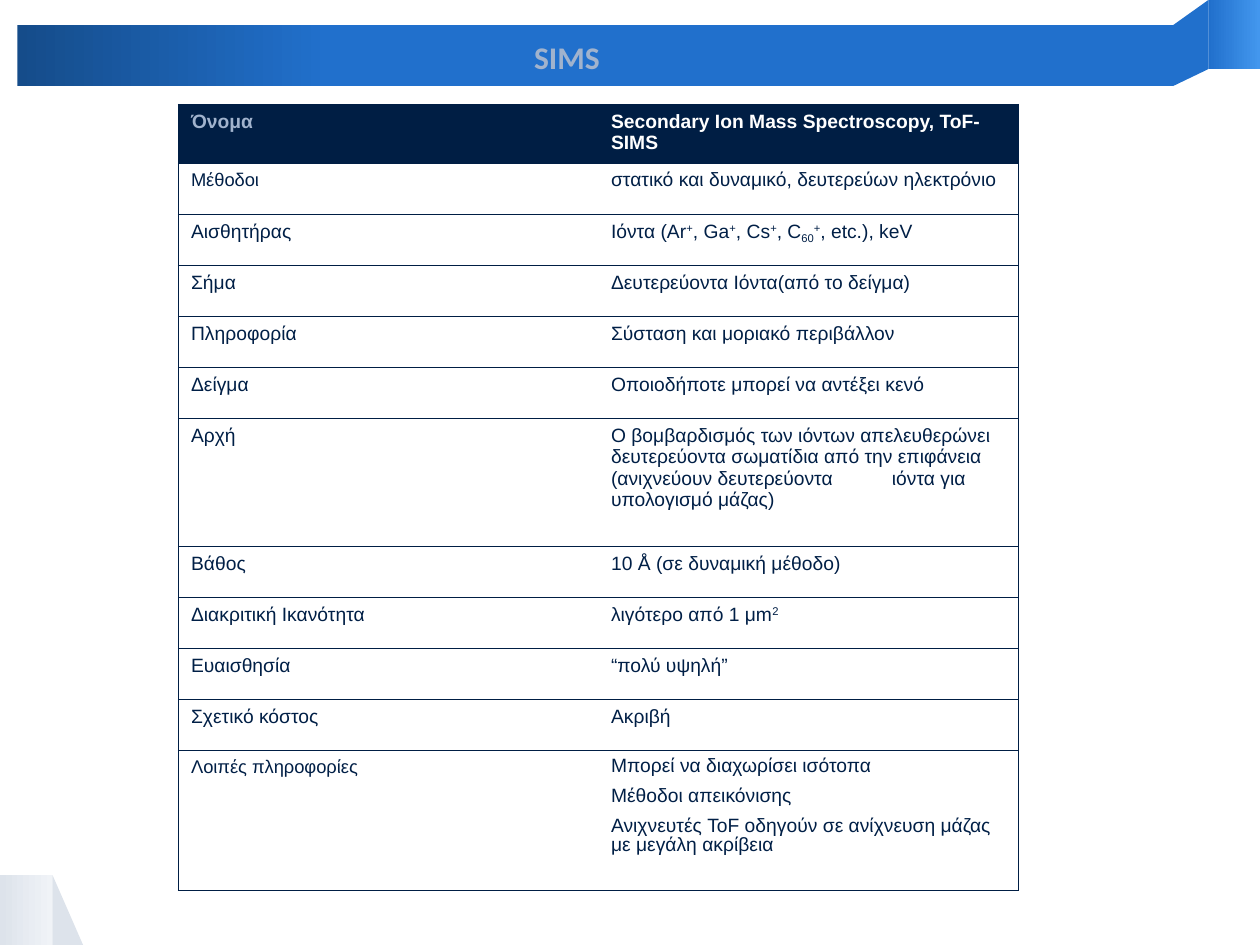
import dataclasses
import typing

import pptx
import pptx.dml.color
import pptx.enum.shapes
import pptx.enum.text
import pptx.util
import lxml.etree
import pptx.oxml.ns

Pt = pptx.util.Pt
SHAPE = pptx.enum.shapes.MSO_SHAPE
qn = pptx.oxml.ns.qn

COLORS = {
    "navy": "001E44",
    "body": "001F46",
    "muted": "A1B3CD",
    "white": "FFFFFF",
    "blue": "2170CC",
    "deep": "154C8A",
    "sky": "4397EE",
    "grey": "DDE3EB",
    "pale": "F0F3F7",
}
SUPER, SUB = 30000, -25000


class Piece(typing.NamedTuple):
    text: str
    baseline: int = 0


@dataclasses.dataclass
class Property:
    label: str
    paragraphs: list[list[Piece]]
    height: float = 29.2
    label_size: float = 11
    label_color: str = "body"
    value_color: str = "body"
    fill: str = "white"
    bold: bool = False
    spacing: float = 1
    before: float = 0
    tab: float = 0


@dataclasses.dataclass
class Panel:
    preset: SHAPE
    left: float
    top: float
    width: float
    height: float
    start: str
    end: str
    end_position: float = 1


PANELS = [
    Panel(SHAPE.RIGHT_TRIANGLE, 30, 500, 17.5, 40, "grey", "grey"),
    Panel(SHAPE.RECTANGLE, 0, 500, 30, 40, "grey", "pale"),
    Panel(SHAPE.RECTANGLE, 690.5, 0, 29.5, 39.5, "blue", "sky"),
    Panel(SHAPE.RECTANGLE, 10, 14.4, 660.3, 34.8, "deep", "blue", 0.27),
]
FOLD = [(690.5, 0), (670.3, 14.4), (670.3, 49.2), (690.5, 39.5)]

PROPERTIES = [
    Property("Όνομα", [[Piece("Secondary Ion Mass Spectroscopy, ToF-SIMS")]], 33.7,
             label_color="muted", value_color="white", fill="navy", bold=True),
    Property("Μέθοδοι", [[Piece("στατικό και δυναμικό, δευτερεύων ηλεκτρόνιο")]], label_size=10.5),
    Property("Αισθητήρας", [[
        Piece("Ιόντα (Ar"), Piece("+", SUPER), Piece(", Ga"), Piece("+", SUPER),
        Piece(", Cs"), Piece("+", SUPER), Piece(", C"), Piece("60", SUB),
        Piece("+", SUPER), Piece(", etc.), keV"),
    ]]),
    Property("Σήμα", [[Piece("Δευτερεύοντα Ιόντα(από το δείγμα)")]]),
    Property("Πληροφορία", [[Piece("Σύσταση και μοριακό περιβάλλον")]]),
    Property("Δείγμα", [[Piece("Οποιοδήποτε μπορεί να αντέξει κενό")]]),
    Property("Αρχή", [[Piece(
        "Ο βομβαρδισμός των ιόντων απελευθερώνει δευτερεύοντα σωματίδια από την επιφάνεια "
        "(ανιχνεύουν δευτερεύοντα\tιόντα για υπολογισμό μάζας)")]], 73, tab=160.5),
    Property("Βάθος", [[Piece("10 Å (σε δυναμική μέθοδο)")]]),
    Property("Διακριτική Ικανότητα", [[Piece("λιγότερο από 1 μm"), Piece("2", SUPER)]]),
    Property("Ευαισθησία", [[Piece("“πολύ υψηλή”")]]),
    Property("Σχετικό κόστος", [[Piece("Ακριβή")]]),
    Property("Λοιπές πληροφορίες", [
        [Piece("Μπορεί να διαχωρίσει ισότοπα")],
        [Piece("Μέθοδοι απεικόνισης")],
        [Piece("Ανιχνευτές ToF οδηγούν σε ανίχνευση μάζας με μεγάλη ακρίβεια")],
    ], 80, label_size=10.5, spacing=0.9, before=6),
]


def rgb(name: str) -> pptx.dml.color.RGBColor:
    return pptx.dml.color.RGBColor.from_string(COLORS[name])


def paint(target, name: str) -> None:
    target.fill.solid()
    target.fill.fore_color.rgb = rgb(name)


def draw_panel(shapes, panel: Panel) -> None:
    shape = shapes.add_shape(panel.preset, Pt(panel.left), Pt(panel.top),
                             Pt(panel.width), Pt(panel.height))
    shape.shadow.inherit = False
    shape.line.fill.background()
    if panel.start == panel.end:
        paint(shape, panel.start)
        return
    shape.fill.gradient()
    shape.fill.gradient_angle = 0
    stops = zip(shape.fill.gradient_stops, (panel.start, panel.end), (0, panel.end_position))
    for stop, color, position in stops:
        stop.color.rgb = rgb(color)
        stop.position = position


def draw_fold(shapes) -> None:
    points = [(Pt(x), Pt(y)) for x, y in FOLD]
    builder = shapes.build_freeform(*points[0])
    builder.add_line_segments(points[1:], close=True)
    fold = builder.convert_to_shape()
    fold.shadow.inherit = False
    fold.line.fill.background()
    paint(fold, "blue")


def add_piece(paragraph, piece: Piece, size: float, color: str, bold: bool,
              font: str = "Arial") -> None:
    run = paragraph.add_run()
    run.text = piece.text
    run.font.name = font
    run.font.size = Pt(size)
    run.font.bold = bold
    run.font.color.rgb = rgb(color)
    if piece.baseline:
        run.font._element.set("baseline", str(piece.baseline))


def set_borders(cell, visible: str) -> None:
    properties = cell._tc.get_or_add_tcPr()
    for side in "LRTB":
        line = lxml.etree.SubElement(properties, qn(f"a:ln{side}"), w=str(Pt(0.75)))
        if side in visible:
            fill = lxml.etree.SubElement(line, qn("a:solidFill"))
            lxml.etree.SubElement(fill, qn("a:srgbClr"), val=COLORS["navy"])
        else:
            lxml.etree.SubElement(line, qn("a:noFill"))


def add_tab(paragraph, position: float) -> None:
    stops = lxml.etree.SubElement(paragraph._p.get_or_add_pPr(), qn("a:tabLst"))
    lxml.etree.SubElement(stops, qn("a:tab"), pos=str(Pt(position)), algn="l")


def fill_row(table, index: int, entry: Property) -> None:
    table.rows[index].height = Pt(entry.height)
    label, value = table.cell(index, 0), table.cell(index, 1)
    for cell, sides in ((label, "LTB"), (value, "RTB")):
        set_borders(cell, sides)
        paint(cell, entry.fill)
    add_piece(label.text_frame.paragraphs[0], Piece(entry.label), entry.label_size,
              entry.label_color, entry.bold)
    for number, pieces in enumerate(entry.paragraphs):
        frame = value.text_frame
        paragraph = frame.add_paragraph() if number else frame.paragraphs[0]
        if entry.before:
            paragraph.line_spacing = entry.spacing
            paragraph.space_before = Pt(entry.before)
        if entry.tab:
            add_tab(paragraph, entry.tab)
        for piece in pieces:
            add_piece(paragraph, piece, 11, entry.value_color, entry.bold)


def draw_table(shapes) -> None:
    total = sum(entry.height for entry in PROPERTIES)
    table = shapes.add_table(len(PROPERTIES), 2, Pt(102), Pt(59.6), Pt(480), Pt(total)).table
    table.horz_banding = False
    for index, entry in enumerate(PROPERTIES):
        fill_row(table, index, entry)


def draw_title(shapes) -> None:
    title = shapes.add_textbox(Pt(144), Pt(18), Pt(360), Pt(29))
    title.text_frame.word_wrap = True
    paragraph = title.text_frame.paragraphs[0]
    paragraph.alignment = pptx.enum.text.PP_ALIGN.CENTER
    add_piece(paragraph, Piece("SIMS"), 18, "muted", True, "Calibri")


def main() -> None:
    deck = pptx.Presentation()
    deck.slide_width, deck.slide_height = Pt(720), Pt(540)
    shapes = deck.slides.add_slide(deck.slide_layouts[6]).shapes
    for panel in PANELS:
        draw_panel(shapes, panel)
    draw_fold(shapes)
    draw_table(shapes)
    draw_title(shapes)
    deck.save("out.pptx")


if __name__ == "__main__":
    main()
